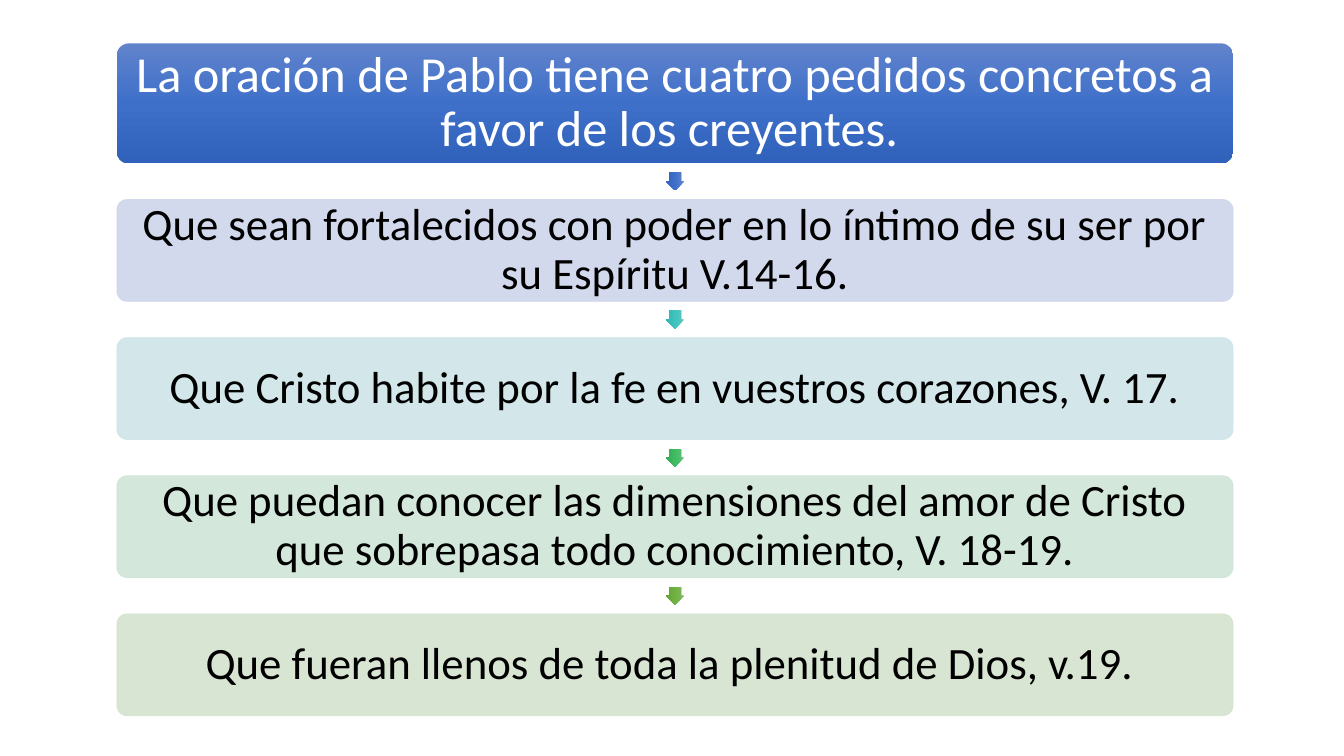
"""Build a slide with a vertical chain of five prayer cards."""
from lxml import etree
from pptx import Presentation
from pptx.dml.color import RGBColor
from pptx.enum.shapes import MSO_SHAPE
from pptx.enum.text import MSO_ANCHOR, PP_ALIGN
from pptx.oxml import parse_xml
from pptx.oxml.ns import nsdecls, qn
from pptx.util import Inches, Pt

ROUND, ARROW = MSO_SHAPE.ROUNDED_RECTANGLE, MSO_SHAPE.RIGHT_ARROW
MIDDLE, CENTER = MSO_ANCHOR.MIDDLE, PP_ALIGN.CENTER
LEFT, WIDTH = 1.16, 11.07
TOP, HEAD, CARD = 0.43, 1.19, 1.01
FIRST, STEP = 1.98, 1.37
SIDE, DROP = 0.18, 0.27

COLORS = {
    "white": "FFFFFF", "black": "000000",
    "lilac": "CFD5EA", "aqua": "CFE5E8", "mint": "CFE5D8", "sage": "D5E3CF",
}
BLENDS = {
    "blue": ("6183CB", "3E70CA", "3062BB"),
    "teal": ("60C6C1", "3DC4BF", "30B5B0"),
    "green": ("60C077", "3FBC62", "33AC55"),
    "leaf": ("81B861", "6FB242", "62A336"),
}
TITLE = "La oración de Pablo tiene cuatro pedidos concretos a favor de los creyentes. "
PLEAS = [
    ("Que sean fortalecidos con poder en lo íntimo de su ser por su Espíritu V.14-16.",
     "lilac", "blue"),
    ("Que Cristo habite por la fe en vuestros corazones, V. 17.", "aqua", "teal"),
    ("Que puedan conocer las dimensiones del amor de Cristo que sobrepasa todo "
     "conocimiento, V. 18-19.", "mint", "green"),
    ("Que fueran llenos de toda la plenitud de Dios, v.19. ", "sage", "leaf"),
]


def write(shape, text, size=32, color="black", inset=0.07):
    """Put centred text into a shape."""
    frame = shape.text_frame
    frame.word_wrap = True
    frame.vertical_anchor = MIDDLE
    frame.margin_left = frame.margin_right = Inches(inset)
    frame.margin_top = frame.margin_bottom = Inches(inset)
    frame.text = text
    para = frame.paragraphs[0]
    para.alignment = CENTER
    para.line_spacing = 0.9
    font = para.runs[0].font
    font.name, font.size = "Calibri", Pt(size)
    font.color.rgb = RGBColor.from_string(COLORS[color])


def draw(slide, kind, left, top, width, height):
    """Add a preset shape without shadow."""
    shape = slide.shapes.add_shape(
        kind, Inches(left), Inches(top), Inches(width), Inches(height))
    shape.shadow.inherit = False
    return shape


def blend(shape, name):
    """Fill a shape with a downward three-stop gradient and no line."""
    shape.line.fill.background()
    shape.fill.solid()
    stops = "".join(
        f'<a:gs pos="{i * 50000}"><a:srgbClr val="{tone}"/></a:gs>'
        for i, tone in enumerate(BLENDS[name]))
    grad = parse_xml(
        f'<a:gradFill {nsdecls("a")} rotWithShape="1"><a:gsLst>{stops}</a:gsLst>'
        '<a:lin ang="5400000" scaled="0"/></a:gradFill>')
    props = shape.element.spPr
    props.replace(props.find(qn("a:solidFill")), grad)


def tint(shape, name):
    """Give a shape a fill and line of one colour at 90% opacity."""
    shape.line.width = Pt(0.5)
    for fill in (shape.fill, shape.line.fill):
        fill.solid()
        fill.fore_color.rgb = RGBColor.from_string(COLORS[name])
    for tone in shape.element.spPr.iter(qn("a:srgbClr")):
        etree.SubElement(tone, qn("a:alpha")).set("val", "90000")


def head(slide):
    """Place the slide title on its gradient card."""
    card = draw(slide, ROUND, LEFT, TOP, WIDTH, HEAD)
    card.adjustments[0] = 0.1
    blend(card, "blue")
    title = slide.shapes.title
    title.left, title.top = Inches(LEFT), Inches(TOP)
    title.width, title.height = Inches(WIDTH), Inches(HEAD)
    write(title, TITLE, size=36, color="white", inset=0.08)
    title.element.addprevious(card.element)


def arrow(slide, top, name):
    """Draw a small arrow pointing down."""
    shape = draw(slide, ARROW, LEFT + (WIDTH - SIDE) / 2, top, SIDE, SIDE)
    shape.rotation = 90
    shape.adjustments[0], shape.adjustments[1] = 0.667, 0.5
    blend(shape, name)


def plea(slide, top, text, name):
    """Draw one pale card with its request."""
    card = draw(slide, ROUND, LEFT, top, WIDTH, CARD)
    card.adjustments[0] = 0.1
    tint(card, name)
    write(card, text)


def main():
    """Build and save the slide."""
    deck = Presentation()
    deck.slide_width, deck.slide_height = Inches(13.33), Inches(7.5)
    slide = deck.slides.add_slide(deck.slide_layouts[5])
    head(slide)
    for i, (text, pale, deep) in enumerate(PLEAS):
        top = FIRST + i * STEP
        arrow(slide, top - DROP, deep)
        plea(slide, top, text, pale)
    deck.save("out.pptx")


if __name__ == "__main__":
    main()
